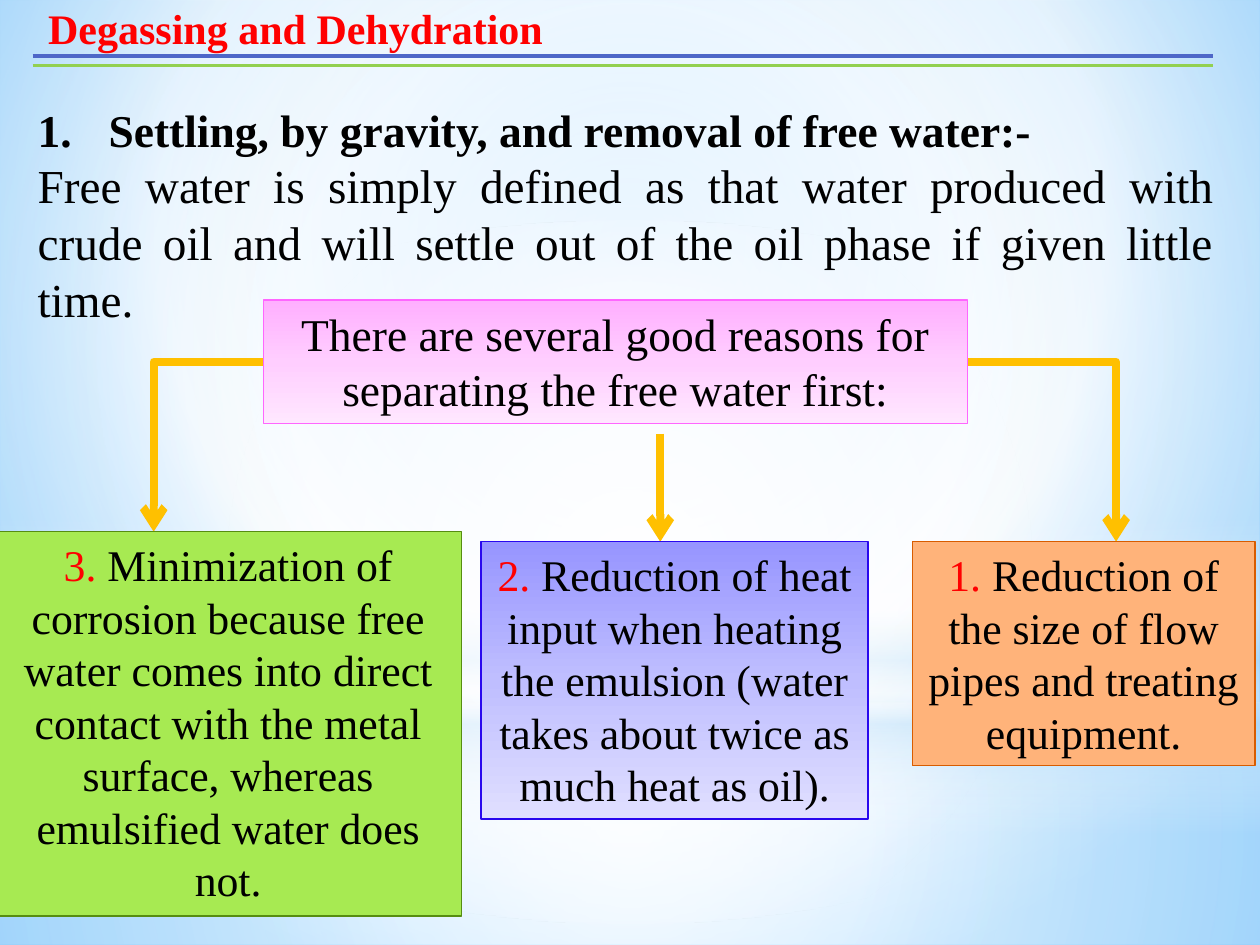
from dataclasses import dataclass

from lxml import etree
from pptx import Presentation
from pptx.dml.color import RGBColor
from pptx.enum.shapes import MSO_CONNECTOR, MSO_SHAPE
from pptx.enum.text import MSO_ANCHOR, MSO_AUTO_SIZE, PP_ALIGN
from pptx.oxml import parse_xml
from pptx.oxml.ns import nsdecls, qn
from pptx.util import Cm, Pt

RECTANGLE, OVAL = MSO_SHAPE.RECTANGLE, MSO_SHAPE.OVAL
STRAIGHT, ELBOW = MSO_CONNECTOR.STRAIGHT, MSO_CONNECTOR.ELBOW
TOP = MSO_ANCHOR.TOP
GROW = MSO_AUTO_SIZE.SHAPE_TO_FIT_TEXT
LEFT, CENTER, JUSTIFY = PP_ALIGN.LEFT, PP_ALIGN.CENTER, PP_ALIGN.JUSTIFY


@dataclass(frozen=True)
class Theme:
    font: str = "Times New Roman"
    title_size: float = 24
    heading_size: float = 26
    body_size: float = 27
    reason_size: float = 25
    rule: float = 2.25
    arrow: float = 4.5
    border: float = 0.75
    ink: str = "000000"
    accent: str = "FF0000"
    blue: str = "4E67C8"
    green: str = "92D050"
    gold: str = "FFC000"
    pink_line: str = "FF66FF"
    orange: str = "FFB37A"
    orange_line: str = "D85C00"
    violet_line: str = "2908EE"
    lime: str = "A7EA52"
    lime_line: str = "568D11"
    pinks: tuple = ((0, "FFAFFF"), (50, "FFCEFF"), (100, "FFE7FF"))
    violets: tuple = ((0, "9795FF"), (50, "BFBEFF"), (100, "E0DFFF"))
    sky: tuple = ((0, "9ED5FF"), (60, "FFFFFF"), (100, "5BB9FF"))
    lower_haze: tuple = ((0, "FFFFFF", 91), (37, "FFFFFF", 76), (100, "B4DCFA", 79))
    upper_haze: tuple = ((0, "FFFFFF", 89), (48, "FFFFFF", 62), (100, "B4DCFA", 79))
    horizon: tuple = ((0, "FFFFFF", 0), (29, "FFFFFF", 30), (45, "B4DCFA", 40),
                      (55, "FFFFFF", 26), (65, "B4DCFA", 60), (100, "FFFFFF", 0))
    glow: tuple = ((0, "FFFFFF", 100), (56, "FFFFFF", 0))


THEME = Theme()
MIDDLE = (50, 50, 50, 50)


def color(value):
    return RGBColor.from_string(value)


def gradient(stops, focus=None):
    fill = parse_xml(f'<a:gradFill {nsdecls("a")} rotWithShape="1"><a:gsLst/></a:gradFill>')
    for position, value, *alpha in stops:
        stop = etree.SubElement(fill[0], qn("a:gs"), pos=str(position * 1000))
        tint = etree.SubElement(stop, qn("a:srgbClr"), val=value)
        if alpha:
            etree.SubElement(tint, qn("a:alpha"), val=str(alpha[0] * 1000))
    if focus:
        circle = etree.SubElement(fill, qn("a:path"), {"path": "circle"})
        sides = {side: str(share * 1000) for side, share in zip("ltrb", focus)}
        etree.SubElement(circle, qn("a:fillToRect"), sides)
    else:
        etree.SubElement(fill, qn("a:lin"), ang="5400000", scaled="0")
    return fill


def paint_gradient(owner, fill, stops, focus=None):
    fill.background()
    blank = owner.xpath("./p:spPr/a:noFill | .//p:bgPr/a:noFill")[0]
    blank.getparent().replace(blank, gradient(stops, focus))


def add_panel(page, frame, fill, border=None, focus=None, kind=RECTANGLE):
    box = page.shapes.add_shape(kind, *map(Cm, frame))
    box.shadow.inherit = False
    if isinstance(fill, str):
        box.fill.solid()
        box.fill.fore_color.rgb = color(fill)
    else:
        paint_gradient(box.element, box.fill, fill, focus)
    if border:
        box.line.color.rgb = color(border)
        box.line.width = Pt(THEME.border)
    else:
        box.line.fill.background()
    return box


def prepare_text(box):
    frame = box.text_frame
    frame.word_wrap = True
    frame.auto_size = GROW
    frame.vertical_anchor = TOP
    return frame


def write(para, spans, size, align=LEFT, bold=False):
    para.alignment = align
    para.font.name = THEME.font
    para.font.size = Pt(size)
    para.font.bold = bold
    for text, value in spans:
        span = para.add_run()
        span.text = text
        span.font.color.rgb = color(value)


def number(para, indent):
    props = para._p.get_or_add_pPr()
    props.set("marL", str(indent))
    props.set("indent", str(-indent))
    marker = etree.Element(qn("a:buAutoNum"), type="arabicPeriod")
    props.find(qn("a:defRPr")).addprevious(marker)


def add_line(page, start, end, value, width, kind=STRAIGHT, arrow=False):
    line = page.shapes.add_connector(kind, *map(Cm, start + end))
    line.line.color.rgb = color(value)
    line.line.width = Pt(width)
    props = line.element.spPr
    if kind == ELBOW:
        props.find(qn("a:prstGeom")).set("prst", "bentConnector2")
    if arrow:
        etree.SubElement(props.find(qn("a:ln")), qn("a:tailEnd"), type="arrow")
    etree.SubElement(props, qn("a:effectLst"))


def add_backdrop(page):
    paint_gradient(page.element, page.background.fill, THEME.sky, (20, 10, 20, 60))
    add_panel(page, (0, 14.17, 25.4, 4.88), THEME.lower_haze, focus=MIDDLE)
    add_panel(page, (0, 0, 25.4, 14.17), THEME.upper_haze, focus=MIDDLE)
    add_panel(page, (0, 10.46, 25.4, 6.35), THEME.horizon)
    add_panel(page, (0, 4.45, 25.4, 14.17), THEME.glow, focus=MIDDLE, kind=OVAL)


def add_header(page):
    box = page.shapes.add_textbox(Cm(0.51), Cm(-0.08), Cm(24.21), Cm(1.27))
    write(prepare_text(box).paragraphs[0], [(" Degassing and Dehydration", THEME.accent)],
          THEME.title_size, bold=True)
    for top, value in ((1.12, THEME.blue), (1.32, THEME.green)):
        add_line(page, (0.66, top), (24.46, top), value, THEME.rule)


def add_definition(page):
    box = page.shapes.add_textbox(Cm(0.51), Cm(1.93), Cm(24.21), Cm(4.83))
    frame = prepare_text(box)
    heading = frame.paragraphs[0]
    write(heading, [("Settling, by gravity, and removal of free water:-", THEME.ink)],
          THEME.heading_size, bold=True)
    number(heading, Cm(1.43))
    write(frame.add_paragraph(),
          [("Free water is simply defined as that water produced with crude oil and will "
            "settle out of the oil phase if given little time.", THEME.ink)],
          THEME.body_size, JUSTIFY)


def add_reason(page, label, text, frame, fill, border):
    box = add_panel(page, frame, fill, border)
    write(prepare_text(box).paragraphs[0], [(label, THEME.accent), (text, THEME.ink)],
          THEME.reason_size, CENTER)


def add_reasons(page):
    question = add_panel(page, (5.31, 6.05, 14.2, 2.49), THEME.pinks, THEME.pink_line)
    write(prepare_text(question).paragraphs[0],
          [("There are several good reasons for separating the free water first:", THEME.ink)],
          THEME.heading_size, CENTER)
    for start, end, kind in (((19.51, 7.29), (22.5, 10.92), ELBOW),
                             ((13.31, 8.74), (13.31, 10.92), STRAIGHT),
                             ((5.31, 7.29), (3.1, 10.72), ELBOW)):
        add_line(page, start, end, THEME.gold, THEME.arrow, kind, arrow=True)
    add_reason(page, "1. ", "Reduction of the size of flow pipes and treating equipment.",
               (18.39, 10.92, 6.91, 4.52), THEME.orange, THEME.orange_line)
    add_reason(page, "2. ", "Reduction of heat input when heating the emulsion "
               "(water takes about twice as much heat as oil).",
               (9.7, 10.92, 7.8, 5.59), THEME.violets, THEME.violet_line)
    add_reason(page, "3. ", "Minimization of corrosion because free water comes into direct "
               "contact with the metal surface, whereas emulsified water does not.",
               (-0.1, 10.72, 9.4, 7.75), THEME.lime, THEME.lime_line)


def main():
    deck = Presentation()
    deck.slide_width, deck.slide_height = Cm(25.4), Cm(19.05)
    page = deck.slides.add_slide(deck.slide_layouts[6])
    add_backdrop(page)
    add_header(page)
    add_definition(page)
    add_reasons(page)
    deck.save("out.pptx")


if __name__ == "__main__":
    main()
